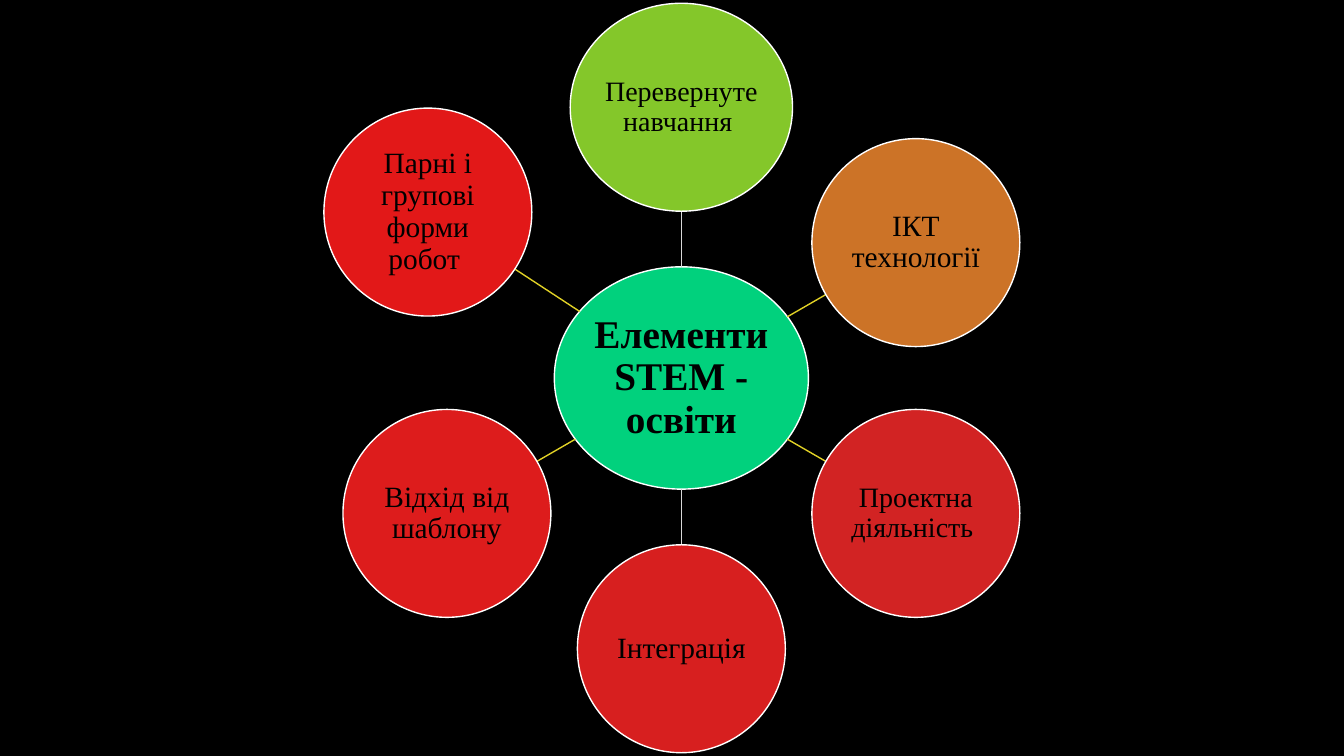
"""Build a slide with a radial diagram of the elements of STEM education."""
import math

import lxml.etree
import pptx
import pptx.dml.color
import pptx.enum.shapes
import pptx.enum.text
import pptx.oxml.ns
import pptx.util

FONT = "Times New Roman"
BLACK, WHITE, YELLOW, GREY = "000000", "FFFFFF", "E1D126", "D9D9D9"
SLIDE_SIZE = (960, 540)
CENTRE = (486.7, 270)
HUB = {"text": "Елементи STEM - освіти", "fill": "01D17D", "size": 28, "bold": True,
       "width": 181.5, "height": 158.8, "inset": 1.5}
ORBIT, DIAMETER = 193.4, 148.5
SATELLITES = [
    {"text": "Перевернуте навчання ", "fill": "84C72A", "size": 20, "angle": 270,
     "width": 158.8, "line": GREY},
    {"text": "ІКТ технології", "fill": "CC7327", "size": 21, "angle": 330},
    {"text": "Проектна діяльність ", "fill": "D22323", "size": 20, "angle": 30},
    {"text": "Інтеграція", "fill": "D71F1F", "size": 21, "angle": 90, "line": GREY},
    {"text": "Відхід від шаблону", "fill": "DD1C1C", "size": 21, "angle": 150},
    {"text": "Парні і групові форми робот ", "fill": "E21818", "size": 21,
     "angle": 213.2, "orbit": 216.4},
]


def colour(value):
    return pptx.dml.color.RGBColor.from_string(value)


def set_values(target, values):
    for name, value in values.items():
        setattr(target, name, value)


def point_at(angle, distance):
    radians = math.radians(angle)
    return (CENTRE[0] + distance * math.cos(radians),
            CENTRE[1] + distance * math.sin(radians))


def ellipse_radius(width, height, angle):
    radians = math.radians(angle)
    return 1 / math.hypot(2 * math.cos(radians) / width, 2 * math.sin(radians) / height)


def add_circle(slide, node, centre):
    width, height = node.get("width", DIAMETER), node.get("height", DIAMETER)
    box = (centre[0] - width / 2, centre[1] - height / 2, width, height)
    shape = slide.shapes.add_shape(pptx.enum.shapes.MSO_SHAPE.OVAL, *map(pptx.util.Pt, box))
    shape.shadow.inherit = False
    shape.fill.solid()
    shape.fill.fore_color.rgb = colour(node["fill"])
    shape.line.color.rgb = colour(WHITE)
    shape.line.width = pptx.util.Pt(1)
    frame = shape.text_frame
    inset = pptx.util.Pt(node.get("inset", 0.75))
    set_values(frame, {
        "word_wrap": True, "vertical_anchor": pptx.enum.text.MSO_ANCHOR.MIDDLE,
        "margin_left": inset, "margin_right": inset,
        "margin_top": inset, "margin_bottom": inset})
    paragraph = frame.paragraphs[0]
    set_values(paragraph, {"alignment": pptx.enum.text.PP_ALIGN.CENTER, "line_spacing": 0.9})
    run = paragraph.add_run()
    run.text = node["text"]
    set_values(run.font, {"name": FONT, "size": pptx.util.Pt(node["size"]),
                          "bold": node.get("bold", False)})
    run.font.color.rgb = colour(BLACK)


def add_spoke(slide, node):
    angle = node["angle"]
    start = ellipse_radius(HUB["width"], HUB["height"], angle)
    end = node.get("orbit", ORBIT) - ellipse_radius(node.get("width", DIAMETER), DIAMETER, angle)
    ends = point_at(angle, start) + point_at(angle, end)
    spoke = slide.shapes.add_connector(
        pptx.enum.shapes.MSO_CONNECTOR.STRAIGHT, *map(pptx.util.Pt, ends))
    spoke.line.color.rgb = colour(node.get("line", YELLOW))
    spoke.line.width = pptx.util.Pt(1)
    lxml.etree.SubElement(spoke._element.spPr, pptx.oxml.ns.qn("a:effectLst"))


def main():
    presentation = pptx.Presentation()
    presentation.slide_width, presentation.slide_height = map(pptx.util.Pt, SLIDE_SIZE)
    slide = presentation.slides.add_slide(presentation.slide_layouts[6])
    slide.background.fill.solid()
    slide.background.fill.fore_color.rgb = colour(BLACK)
    add_circle(slide, HUB, CENTRE)
    for node in SATELLITES:
        add_spoke(slide, node)
        add_circle(slide, node, point_at(node["angle"], node.get("orbit", ORBIT)))
    presentation.save("out.pptx")


if __name__ == "__main__":
    main()
